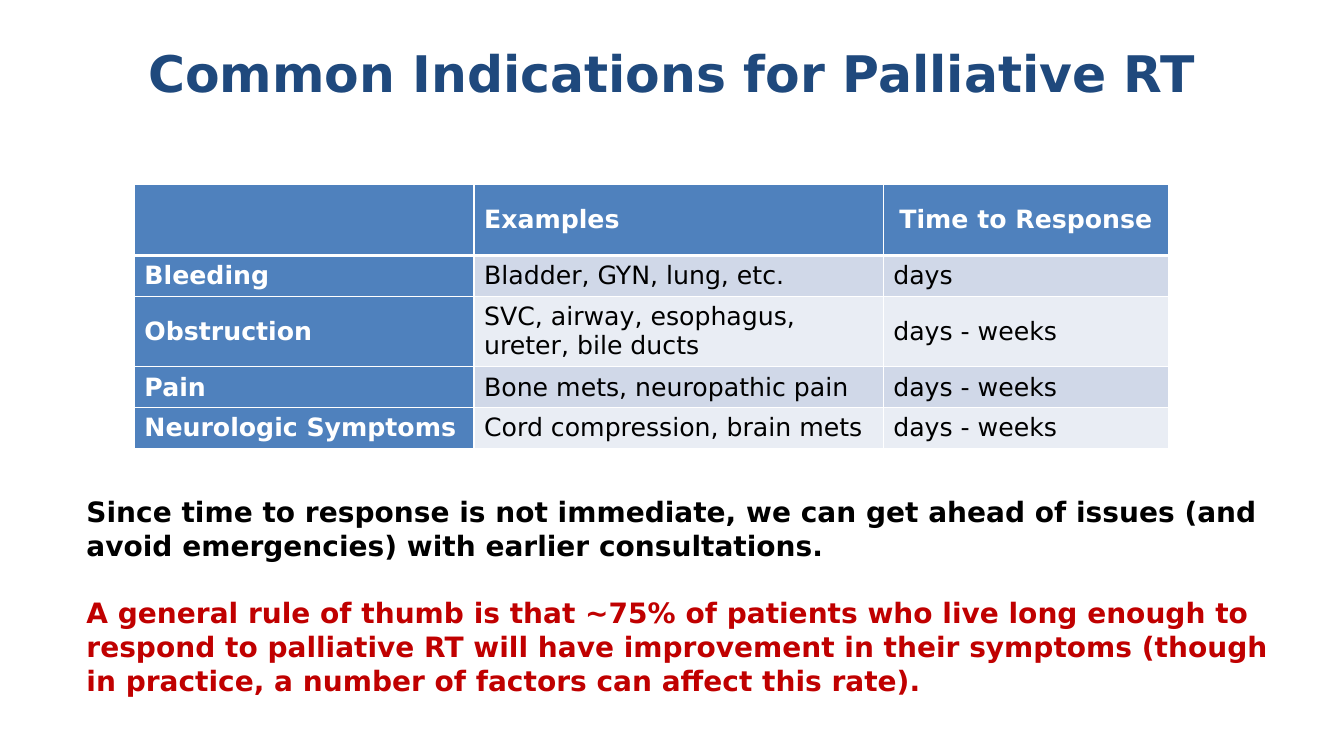
from pptx import Presentation
from pptx.dml.color import RGBColor
from pptx.enum.text import MSO_ANCHOR as Anchor, PP_ALIGN as Align
from pptx.oxml import parse_xml
from pptx.oxml.ns import nsdecls
from pptx.util import Pt

# Content
TITLE = "Common Indications for Palliative RT"
TABLE = [
    ["", "Examples", "Time to Response"],
    ["Bleeding", "Bladder, GYN, lung, etc.", "days"],
    ["Obstruction", "SVC, airway, esophagus,\nureter, bile ducts", "days - weeks"],
    ["Pain", "Bone mets, neuropathic pain", "days - weeks"],
    ["Neurologic Symptoms", "Cord compression, brain mets", "days - weeks"],
]
NOTES = [
    ("Since time to response is not immediate, we can get ahead of issues "
     "(and avoid emergencies) with earlier consultations.", "000000"),
    ("A general rule of thumb is that ~75% of patients who live long enough to "
     "respond to palliative RT will have improvement in their symptoms "
     "(though in practice, a number of factors can affect this rate).", "C00000"),
]

# Layout and colours
FONT = "DejaVu Sans"
COL_WIDTHS = [242.6, 292.3, 203.8]
ROW_HEIGHTS = [50.4, 29.2, 49.2, 29.2, 29.2]
HEADER, BANDS = "4F81BD", ["E9EDF4", "D0D8E8"]


def rgb(color):
    return RGBColor.from_string(color)


def write(p, text, size=18, color="000000", bold=False, align=Align.LEFT, before=0):
    p.alignment = align
    p.space_before = Pt(before)
    r = p.add_run()
    r.text = text
    r.font.name, r.font.size, r.font.bold = FONT, Pt(size), bold
    r.font.color.rgb = rgb(color)


def add_text_box(x, y, w, h, anchor=Anchor.TOP):
    tf = s.shapes.add_textbox(Pt(x), Pt(y), Pt(w), Pt(h)).text_frame
    tf.word_wrap = True
    tf.vertical_anchor = anchor
    return tf


def add_borders(cell, bottom):
    # Borders must precede the fill in the cell properties
    tc_pr = cell._tc.get_or_add_tcPr()
    for i, (side, width) in enumerate([("L", 1), ("R", 1), ("T", 1), ("B", bottom)]):
        tc_pr.insert(i, parse_xml(
            f'<a:ln{side} {nsdecls("a")} w="{Pt(width)}"><a:solidFill>'
            f'<a:srgbClr val="FFFFFF"/></a:solidFill></a:ln{side}>'))


prs = Presentation()
prs.slide_width, prs.slide_height = Pt(960), Pt(540)
s = prs.slides.add_slide(prs.slide_layouts[6])

# Title
tf = add_text_box(0, 0.7, 960, 101.5, Anchor.MIDDLE)
write(tf.paragraphs[0], TITLE, size=36, color="1F497D", bold=True, align=Align.CENTER)

# Table
table = s.shapes.add_table(len(TABLE), len(COL_WIDTHS), Pt(96), Pt(132),
                           Pt(sum(COL_WIDTHS)), Pt(sum(ROW_HEIGHTS))).table
for col, width in zip(table.columns, COL_WIDTHS):
    col.width = Pt(width)
for row, height in zip(table.rows, ROW_HEIGHTS):
    row.height = Pt(height)
for i, texts in enumerate(TABLE):
    for j, text in enumerate(texts):
        cell = table.cell(i, j)
        head = i == 0 or j == 0
        cell.vertical_anchor = Anchor.MIDDLE
        cell.fill.solid()
        cell.fill.fore_color.rgb = rgb(HEADER if head else BANDS[i % 2])
        add_borders(cell, bottom=3 if i == 0 else 1)
        if not text:
            continue
        tf = cell.text_frame
        for n, line in enumerate(text.split("\n")):
            p = tf.add_paragraph() if n else tf.paragraphs[0]
            write(p, line, color="FFFFFF" if head else "000000", bold=head,
                  align=Align.CENTER if (i, j) == (0, 2) else Align.LEFT)

# Notes below the table
tf = add_text_box(54.7, 350, 871.2, 152.6)
for n, (text, color) in enumerate(NOTES):
    p = tf.add_paragraph() if n else tf.paragraphs[0]
    write(p, text, size=20, color=color, bold=True, before=24 if n else 0)

prs.save("out.pptx")
